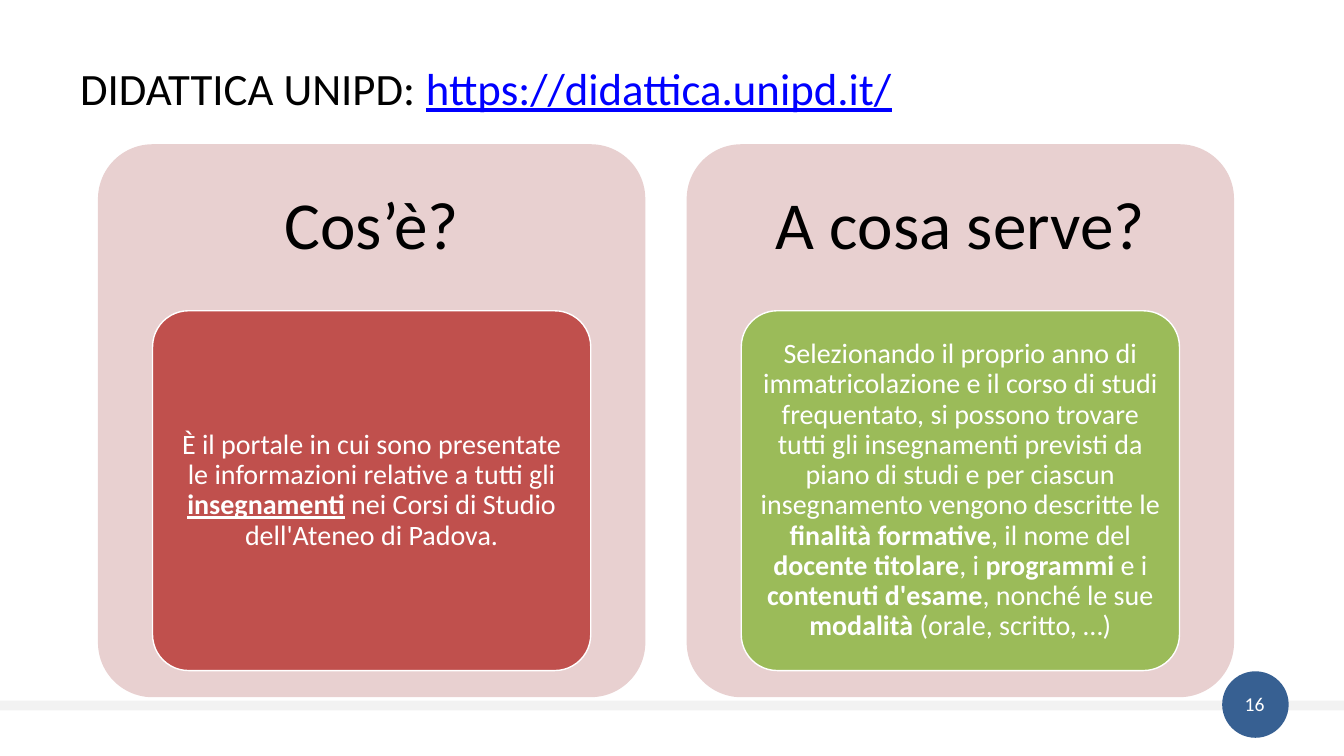
from dataclasses import dataclass
from pptx import Presentation
from pptx.dml.color import RGBColor as RGB
from pptx.enum.shapes import MSO_SHAPE as Kind
from pptx.enum.text import MSO_ANCHOR as Anchor, MSO_AUTO_SIZE as Fit, PP_ALIGN as Align
from pptx.util import Pt


@dataclass(frozen=True)
class Theme:
    font: str = "Calibri"
    black: str = "000000"
    white: str = "FFFFFF"
    link: str = "0000FF"
    band: str = "F2F2F2"
    badge: str = "376092"
    card: str = "E8D0D0"
    red: str = "C0504D"
    green: str = "9BBB59"
    title: int = 32
    head: int = 48
    body: int = 20
    page: int = 14


T = Theme()

# Card grid, in points
LEFT, TOP, WIDE, HIGH, STEP = 70, 103, 391, 395, 420.5
HEAD = 119
SIDE, BOX = 39, 257

# Runs are (text, style): "b" for bold, "u" for underlined
CARDS = [
    ("Cos’è?", T.red, [
        ("È il portale in cui sono presentate le informazioni relative a tutti gli ", ""),
        ("insegnamenti", "bu"),
        (" nei Corsi di Studio dell'Ateneo di Padova.", ""),
    ]),
    ("A cosa serve?", T.green, [
        ("Selezionando il proprio anno di immatricolazione e il corso di studi "
         "frequentato, si possono trovare tutti gli insegnamenti previsti da "
         "piano di studi e per ciascun insegnamento vengono descritte le ", ""),
        ("finalità formative", "b"),
        (", il nome del ", ""),
        ("docente titolare", "b"),
        (", i ", ""),
        ("programmi", "b"),
        (" e i ", ""),
        ("contenuti d'esame", "b"),
        (", nonché le sue ", ""),
        ("modalità", "b"),
        (" (orale, scritto, …)", ""),
    ]),
]


def add_shape(slide, kind, place, fill, line=None):
    shape = slide.shapes.add_shape(kind, *map(Pt, place))
    shape.shadow.inherit = False
    shape.fill.solid()
    shape.fill.fore_color.rgb = RGB.from_string(fill)
    if line:
        shape.line.color.rgb = RGB.from_string(line)
        shape.line.width = Pt(1)
    else:
        shape.line.fill.background()
    if kind == Kind.ROUNDED_RECTANGLE:
        shape.adjustments[0] = 0.1
    return shape


def write(shape, runs, size, color, align=Align.LEFT, anchor=Anchor.TOP,
          pad=(7.2, 3.6), lead=0.9):
    frame = shape.text_frame
    frame.word_wrap = True
    frame.auto_size = Fit.NONE
    frame.vertical_anchor = anchor
    frame.margin_left = frame.margin_right = Pt(pad[0])
    frame.margin_top = frame.margin_bottom = Pt(pad[1])
    para = frame.paragraphs[0]
    para.alignment = align
    para.line_spacing = lead
    para.font.name = T.font
    para.font.size = Pt(size)
    para.font.color.rgb = RGB.from_string(color)
    for text, style in runs:
        run = para.add_run()
        run.text = text
        if "b" in style:
            run.font.bold = True
        if "u" in style:
            run.font.underline = True
    return para


def add_title(slide):
    title = slide.shapes.title
    title.left, title.top, title.width, title.height = map(Pt, (50, 44, 852, 65))
    para = write(title, [("DIDATTICA UNIPD: ", ""), ("https://didattica.unipd.it/", "u")],
                 T.title, T.black)
    para.runs[1].font.color.rgb = RGB.from_string(T.link)


def add_card(slide, left, head, fill, runs):
    add_shape(slide, Kind.ROUNDED_RECTANGLE, (left, TOP, WIDE, HIGH), T.card)
    label = slide.shapes.add_textbox(*map(Pt, (left, TOP, WIDE, HEAD)))
    write(label, [(head, "")], T.head, T.black, Align.CENTER, Anchor.MIDDLE, (14.4, 14.4))
    place = (left + SIDE, TOP + HEAD, WIDE - 2 * SIDE, BOX)
    box = add_shape(slide, Kind.ROUNDED_RECTANGLE, place, fill, T.white)
    write(box, runs, T.body, T.white, Align.CENTER, Anchor.MIDDLE, (4.3, 2.9))


def add_footer(slide):
    add_shape(slide, Kind.RECTANGLE, (0, 500.5, 960, 7), T.band)
    add_shape(slide, Kind.OVAL, (873, 479.5, 47.5, 47.5), T.badge)


def add_page(slide):
    page = slide.shapes.add_textbox(*map(Pt, (882, 491, 30, 24.5)))
    write(page, [("16", "")], T.page, T.white, lead=1.0)


def main():
    deck = Presentation()
    deck.slide_width, deck.slide_height = Pt(960), Pt(540)
    slide = deck.slides.add_slide(deck.slide_layouts[5])
    # Band and badge lie behind the cards
    add_footer(slide)
    add_title(slide)
    for i, card in enumerate(CARDS):
        add_card(slide, LEFT + i * STEP, *card)
    add_page(slide)
    deck.save("out.pptx")


if __name__ == "__main__":
    main()
